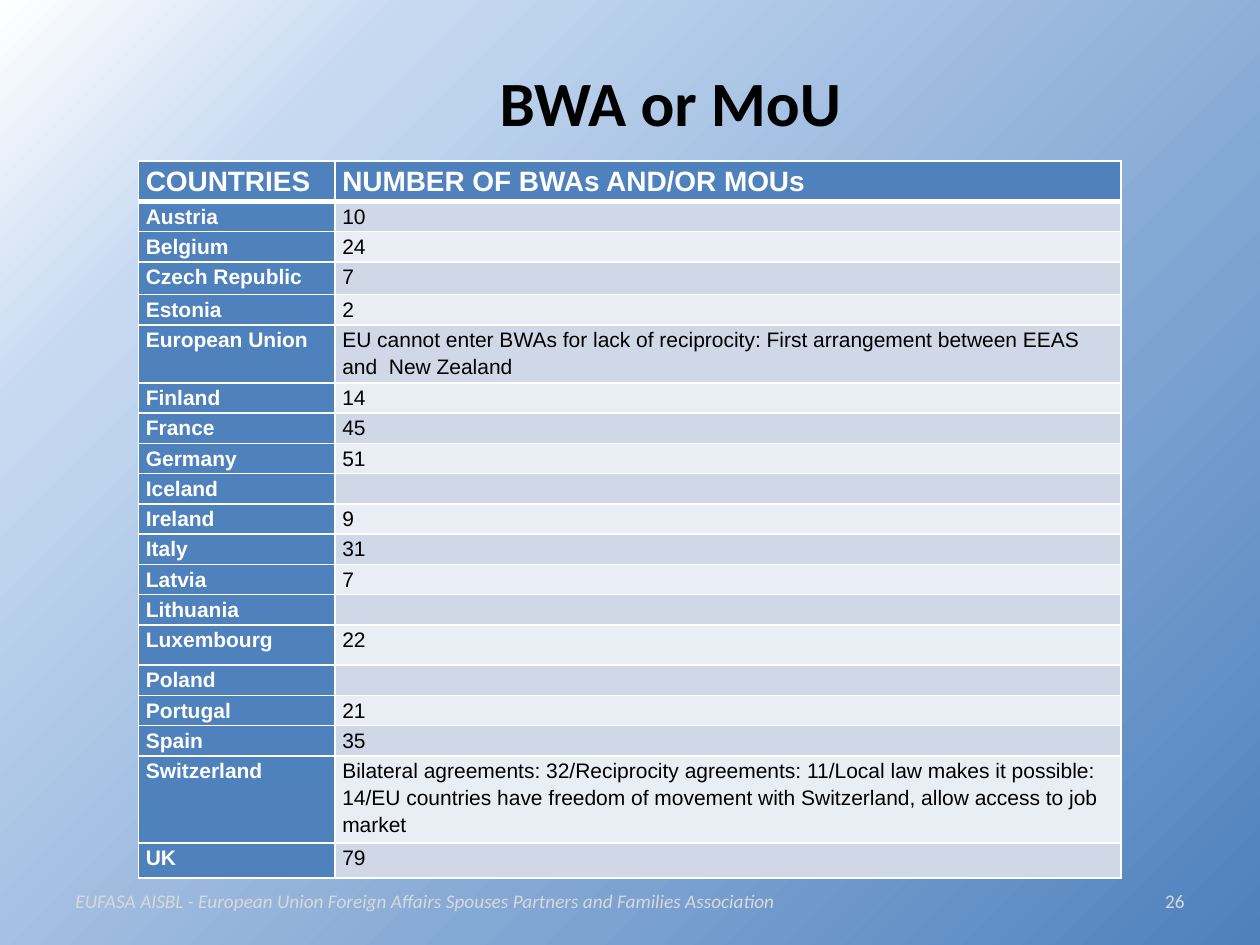
import pptx
import pptx.dml.color
import pptx.enum.text
import pptx.oxml
import pptx.oxml.ns
import pptx.util
from lxml import etree

Cm, Pt = pptx.util.Cm, pptx.util.Pt
RGB = pptx.dml.color.RGBColor
Align = pptx.enum.text.PP_ALIGN
Anchor = pptx.enum.text.MSO_ANCHOR
qn = pptx.oxml.ns.qn

# Content
TITLE = "BWA or MoU"
FOOTER = ("EUFASA AISBL - European Union Foreign Affairs Spouses "
          "Partners and Families Association")
PAGE = "26"
ROWS = [
    ("COUNTRIES", "NUMBER OF BWAs AND/OR MOUs"),
    ("Austria", "10"),
    ("Belgium", "24"),
    ("Czech Republic", "7"),
    ("Estonia", "2"),
    ("European Union", "EU cannot enter BWAs for lack of reciprocity: "
     "First arrangement between EEAS and  New Zealand"),
    ("Finland", "14"),
    ("France", "45"),
    ("Germany", "51"),
    ("Iceland", ""),
    ("Ireland", "9"),
    ("Italy", "31"),
    ("Latvia", "7"),
    ("Lithuania", ""),
    ("Luxembourg", "22"),
    ("Poland", ""),
    ("Portugal", "21"),
    ("Spain", "35"),
    ("Switzerland", "Bilateral agreements: 32/Reciprocity agreements: 11/"
     "Local law makes it possible: 14/EU countries have freedom of movement "
     "with Switzerland, allow access to job market"),
    ("UK", "79"),
]

# Sizes in cm; rows not named here use ROW
ROW = 0.61
TALL = {"COUNTRIES": 0.81, "Czech Republic": 0.66, "Luxembourg": 0.81,
        "Switzerland": 1.14, "UK": 0.71}
COLS = (3.96, 15.85)

# Colours
WHITE = RGB(0xFF, 0xFF, 0xFF)
BLACK = RGB(0, 0, 0)
BLUE = RGB(0x4F, 0x81, 0xBD)
SKY = RGB(0xC6, 0xD9, 0xF1)
DARK = RGB(0xD0, 0xD8, 0xE8)
LIGHT = RGB(0xE9, 0xED, 0xF4)
GREY = RGB(0xD9, 0xD9, 0xD9)
STOPS = [(0, WHITE), (19, SKY), (100, BLUE)]


def put(frame, text, size=12, font="Arial", color=BLACK, bold=False,
        italic=False, align=Align.LEFT, line=None, after=None):
    """Write one formatted paragraph into a text frame."""
    frame.word_wrap = True
    para = frame.paragraphs[0]
    para.alignment = align
    para.line_spacing = line
    para.space_after = after
    if not text:  # an empty cell still needs a small line height
        end = etree.SubElement(para._p, qn("a:endParaRPr"))
        end.set("sz", str(size * 100))
        return
    run = para.add_run()
    run.text = text
    face = run.font
    face.size, face.name = Pt(size), font
    face.bold, face.italic = bold, italic
    face.color.rgb = color


def label(slide, text, left, top, width, height, **style):
    box = slide.shapes.add_textbox(Cm(left), Cm(top), Cm(width), Cm(height))
    box.text_frame.vertical_anchor = Anchor.MIDDLE
    put(box.text_frame, text, **style)


def edge(cell, **widths):
    """Draw white cell borders; widths in points by side."""
    props = cell._tc.get_or_add_tcPr()
    for spot, side in enumerate("LRTB"):
        line = etree.Element(qn("a:ln" + side), w=str(Pt(widths.get(side, 1))))
        fill = etree.SubElement(line, qn("a:solidFill"))
        etree.SubElement(fill, qn("a:srgbClr"), val=str(WHITE))
        props.insert(spot, line)


def paint(slide):
    """Round gradient that spreads from the top left corner."""
    slide.background.fill.gradient()
    grad = slide.background._cSld.find(".//" + qn("a:gradFill"))
    for child in list(grad):
        grad.remove(child)
    stops = etree.SubElement(grad, qn("a:gsLst"))
    for pos, color in STOPS:
        stop = etree.SubElement(stops, qn("a:gs"), pos=str(pos * 1000))
        etree.SubElement(stop, qn("a:srgbClr"), val=str(color))
    way = etree.SubElement(grad, qn("a:path"), path="circle")
    etree.SubElement(way, qn("a:fillToRect"), r="100000", b="100000")


def grid(slide):
    highs = [TALL.get(name, ROW) for name, _ in ROWS]
    table = slide.shapes.add_table(
        len(ROWS), len(COLS), Cm(2.79), Cm(3.25),
        Cm(sum(COLS)), Cm(sum(highs))).table
    for col, width in zip(table.columns, COLS):
        col.width = Cm(width)
    for r, (high, texts) in enumerate(zip(highs, ROWS)):
        table.rows[r].height = Cm(high)
        for c, text in enumerate(texts):
            cell = table.cell(r, c)
            head = r == 0 or c == 0
            cell.margin_left = cell.margin_right = Cm(0.15)
            cell.margin_top = cell.margin_bottom = 0
            cell.fill.solid()
            cell.fill.fore_color.rgb = (
                BLUE if head else DARK if r % 2 else LIGHT)
            edge(cell, B=3 if r == 0 else 1, T=3 if r == 1 else 1)
            put(cell.text_frame, text, size=16 if r == 0 else 12, bold=head,
                color=WHITE if head else BLACK, line=1.15, after=Pt(10))


def main():
    deck = pptx.Presentation()
    deck.slide_width, deck.slide_height = Cm(25.4), Cm(19.05)
    slide = deck.slides.add_slide(deck.slide_layouts[6])
    paint(slide)
    label(slide, TITLE, 2.9, 0.76, 21.23, 2.57, size=36, font="Calibri",
          bold=True, align=Align.CENTER)
    grid(slide)
    # Footer line
    small = dict(size=11, font="Calibri", color=GREY)
    label(slide, PAGE, 18.21, 17.65, 5.92, 1.02, align=Align.RIGHT, **small)
    label(slide, FOOTER, 1.27, 17.65, 16.64, 1.02, italic=True, **small)
    deck.save("out.pptx")


if __name__ == "__main__":
    main()
